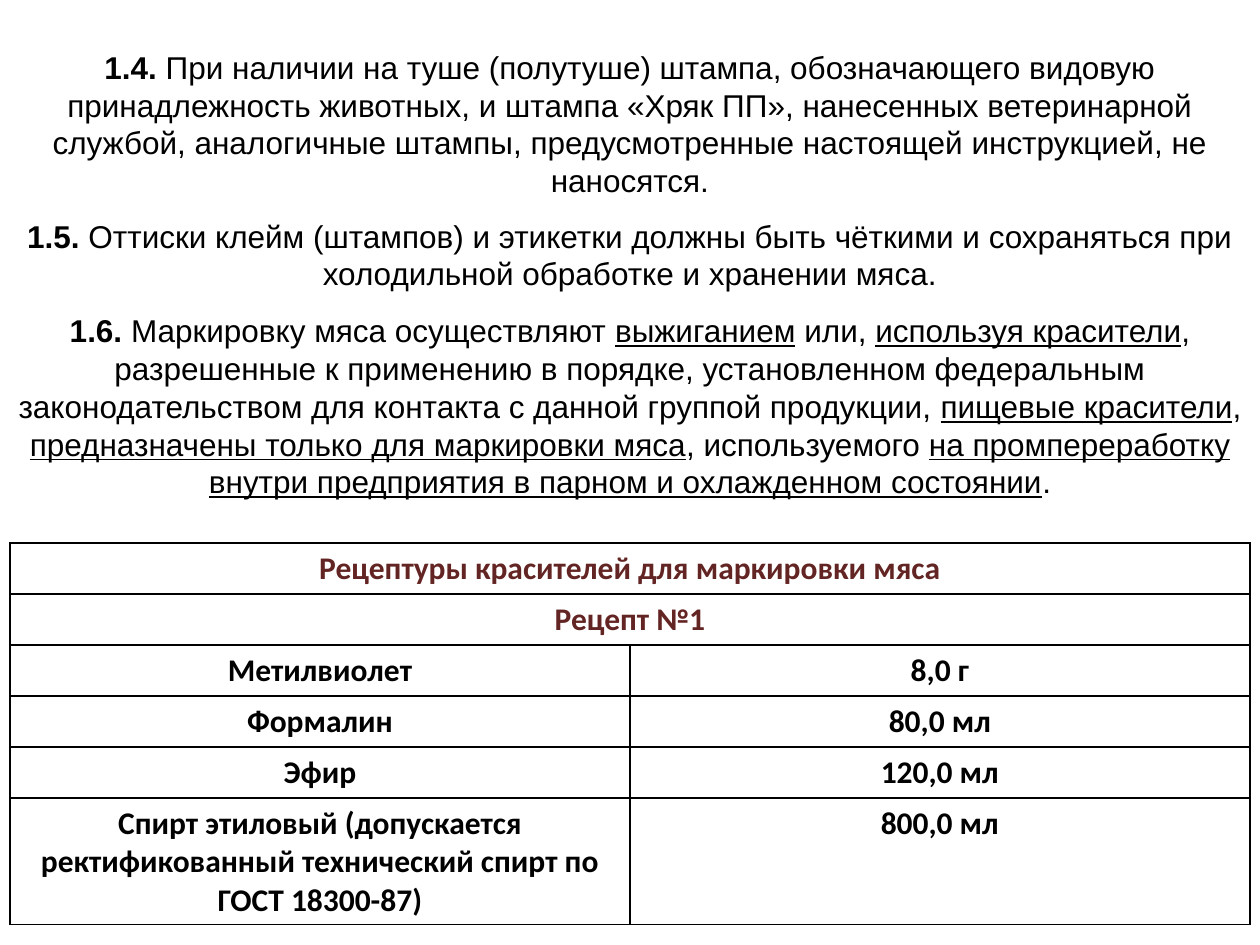
from lxml.etree import SubElement
from pptx import Presentation
from pptx.dml.color import RGBColor
from pptx.enum.text import PP_ALIGN
from pptx.oxml.ns import qn
from pptx.util import Inches, Pt

WIDTH, HEIGHT = 10, 7.5
BLACK, MAROON = "000000", "632523"

CLAUSES = [
    (0.33, 1.31, [
        ("1.4. ", "b"),
        ("При наличии на туше (полутуше) штампа, обозначающего видовую принадлежность "
         "животных, и штампа «Хряк ПП», нанесенных ветеринарной службой, аналогичные "
         "штампы, предусмотренные настоящей инструкцией, не наносятся.", ""),
    ]),
    (1.67, 0.71, [
        ("1.5. ", "b"),
        ("Оттиски клейм (штампов) и этикетки должны быть чёткими и сохраняться при "
         "холодильной обработке и хранении мяса.", ""),
    ]),
    (2.42, 1.62, [
        ("1.6. ", "b"),
        ("Маркировку мяса осуществляют ", ""),
        ("выжиганием", "u"),
        (" или, ", ""),
        ("используя красители", "u"),
        (", разрешенные к применению в порядке, установленном федеральным "
         "законодательством для контакта с данной группой продукции, ", ""),
        ("пищевые красители", "u"),
        (", ", ""),
        ("предназначены только для маркировки мяса", "u"),
        (", используемого ", ""),
        ("на промпереработку внутри предприятия в парном и охлажденном состоянии", "u"),
        (".", ""),
    ]),
]

HEADINGS = ["Рецептуры красителей для маркировки мяса", "Рецепт №1"]
INGREDIENTS = [
    ("Метилвиолет", "8,0 г"),
    ("Формалин", "80,0 мл"),
    ("Эфир", "120,0 мл"),
    ("Спирт этиловый (допускается ректификованный технический спирт по ГОСТ 18300-87)",
     "800,0 мл"),
]


def rgb(value):
    """Turn a hex string into a colour."""
    return RGBColor.from_string(value)


def add_runs(tf, runs, font, color):
    """Write one centred paragraph of (text, style) runs."""
    p = tf.paragraphs[0]
    p.alignment = PP_ALIGN.CENTER
    for text, style in runs:
        r = p.add_run()
        r.text = text
        r.font.name = font
        r.font.size = Pt(18)
        r.font.bold = style == "b"
        r.font.underline = style == "u"
        r.font.color.rgb = rgb(color)


def add_clause(s, left, top, width, height, runs):
    """Place one numbered clause in its box."""
    tf = s.shapes.add_textbox(*map(Inches, (left, top, width, height))).text_frame
    tf.word_wrap = True
    add_runs(tf, runs, "Arial", BLACK)


def set_borders(cell, color):
    """Draw a one-point line on each side of a cell."""
    props = cell._tc.get_or_add_tcPr()
    for position, side in enumerate(("a:lnL", "a:lnR", "a:lnT", "a:lnB")):
        line = SubElement(props, qn(side), w=str(Pt(1)))
        fill = SubElement(line, qn("a:solidFill"))
        SubElement(fill, qn("a:srgbClr"), val=color)
        props.insert(position, line)


def add_recipe_table(s, left, top, width, height):
    """Place the dye recipe, its last row taking the height left over."""
    rows = [(heading,) for heading in HEADINGS] + INGREDIENTS
    row_height = 0.405
    table = s.shapes.add_table(
        len(rows), 2, *map(Inches, (left, top, width, height))).table
    for i, texts in enumerate(rows):
        last = i == len(rows) - 1
        table.rows[i].height = Inches(height - i * row_height if last else row_height)
        for cell in table.rows[i].cells:
            cell.fill.background()
            set_borders(cell, BLACK)
        heading = len(texts) == 1
        if heading:
            table.cell(i, 0).merge(table.cell(i, 1))
        for j, text in enumerate(texts):
            add_runs(table.cell(i, j).text_frame, [(text, "b")], "Calibri",
                     MAROON if heading else BLACK)


def main():
    """Build the slide and save it."""
    prs = Presentation()
    prs.slide_width, prs.slide_height = Inches(WIDTH), Inches(HEIGHT)
    s = prs.slides.add_slide(prs.slide_layouts[6])
    for top, height, runs in CLAUSES:
        add_clause(s, 0, top, WIDTH, height, runs)
    margin = 0.08
    add_recipe_table(s, margin, 4.31, WIDTH - 2 * margin, 3.03)
    prs.save("out.pptx")


if __name__ == "__main__":
    main()
